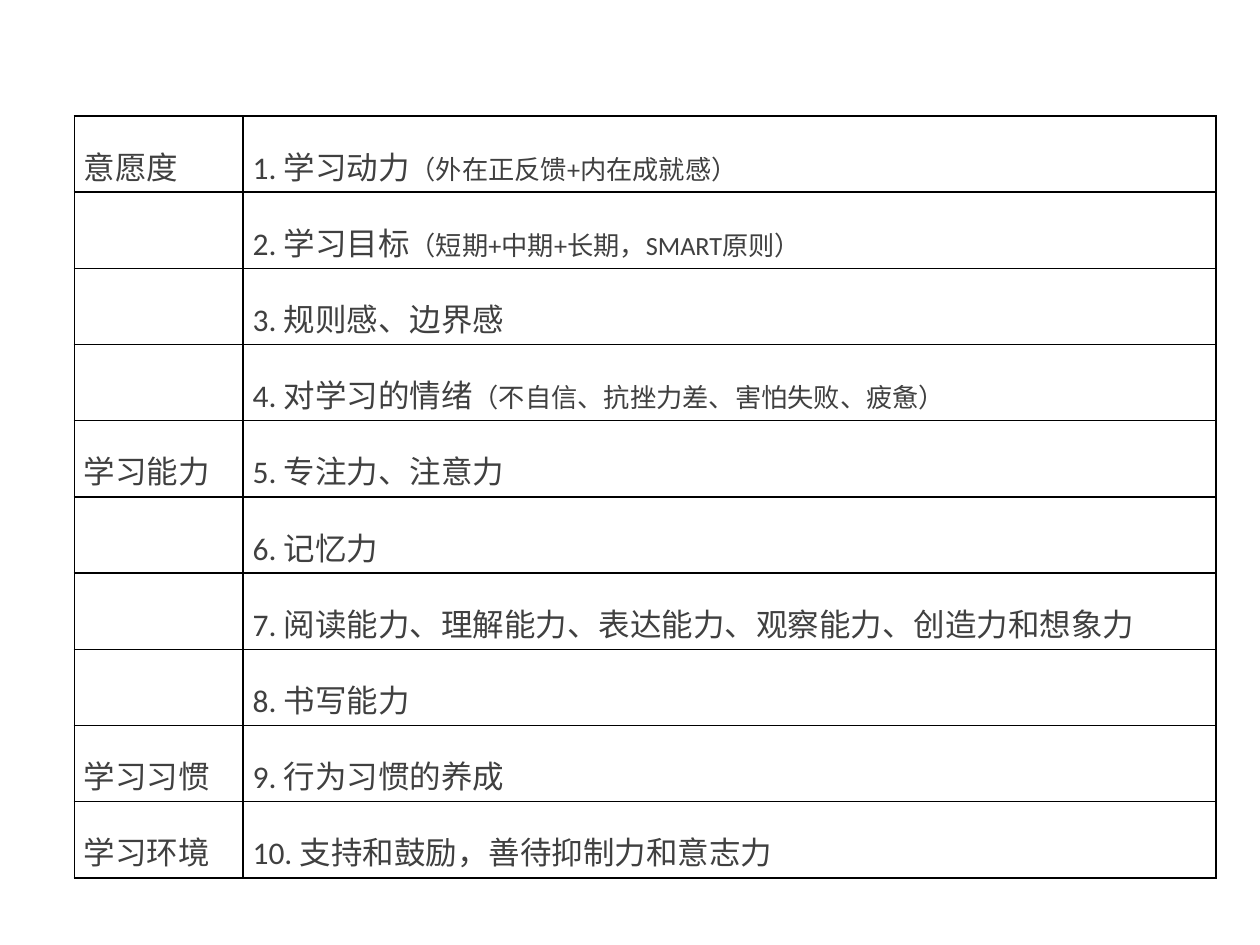
from lxml import etree
from pptx import Presentation
from pptx.dml.color import RGBColor
from pptx.enum.text import MSO_ANCHOR
from pptx.oxml.ns import qn
from pptx.util import Inches, Pt

MIDDLE = MSO_ANCHOR.MIDDLE
BLANK_LAYOUT = 6
FONT = "Calibri"
COLORS = {"text": "404040", "border": "000000"}
TOPIC_SIZE, DETAIL_SIZE = 18, 15
LEFT, TOP, HEIGHT = 0.59, 0.92, 6.05
COLUMN_WIDTHS = (1.34, 7.72)

# Each area lists its topics as (topic, detail in brackets).
AREAS = {
    "意愿度": [
        ("学习动力", "（外在正反馈+内在成就感）"),
        ("学习目标", "（短期+中期+长期，SMART原则）"),
        ("规则感、边界感", ""),
        ("对学习的情绪", "（不自信、抗挫力差、害怕失败、疲惫）"),
    ],
    "学习能力": [
        ("专注力、注意力", ""),
        ("记忆力", ""),
        ("阅读能力、理解能力、表达能力、观察能力、创造力和想象力", ""),
        ("书写能力", ""),
    ],
    "学习习惯": [("行为习惯的养成", "")],
    "学习环境": [("支持和鼓励，善待抑制力和意志力", "")],
}


def table_rows():
    """Number the topics throughout and name each area on its first row only."""
    rows = []
    for area, topics in AREAS.items():
        for index, (topic, detail) in enumerate(topics):
            label = area if index == 0 else ""
            rows.append((label, f"{len(rows) + 1}. {topic}", detail))
    return rows


def add_borders(cell):
    properties = cell._tc.get_or_add_tcPr()
    for position, side in enumerate(("a:lnL", "a:lnR", "a:lnT", "a:lnB")):
        line = etree.Element(qn(side), w=str(Pt(1)))
        fill = etree.SubElement(line, qn("a:solidFill"))
        etree.SubElement(fill, qn("a:srgbClr"), val=COLORS["border"])
        properties.insert(position, line)


def format_cell(cell):
    cell.fill.background()
    cell.vertical_anchor = MIDDLE
    cell.margin_left = cell.margin_right = Pt(5.4)
    cell.margin_top = cell.margin_bottom = Inches(0.03)
    add_borders(cell)


def write_cell(cell, topic, detail=""):
    paragraph = cell.text_frame.paragraphs[0]
    paragraph.line_spacing = 1.5
    paragraph.font.name = FONT
    paragraph.font.color.rgb = RGBColor.from_string(COLORS["text"])
    for text, size in ((topic, TOPIC_SIZE), (detail, DETAIL_SIZE)):
        if text:
            run = paragraph.add_run()
            run.text = text
            run.font.size = Pt(size)


def add_topic_table(slide):
    rows = table_rows()
    table = slide.shapes.add_table(
        len(rows), len(COLUMN_WIDTHS), Inches(LEFT), Inches(TOP),
        Inches(sum(COLUMN_WIDTHS)), Inches(HEIGHT),
    ).table
    table.first_row = table.horz_banding = False
    for column, width in zip(table.columns, COLUMN_WIDTHS):
        column.width = Inches(width)
    for row, (area, topic, detail) in zip(table.rows, rows):
        area_cell, topic_cell = row.cells
        format_cell(area_cell)
        format_cell(topic_cell)
        if area:
            write_cell(area_cell, area)
        write_cell(topic_cell, topic, detail)


def main():
    presentation = Presentation()
    presentation.slide_width = Inches(10)
    presentation.slide_height = Inches(7.5)
    slide = presentation.slides.add_slide(presentation.slide_layouts[BLANK_LAYOUT])
    add_topic_table(slide)
    presentation.save("out.pptx")


if __name__ == "__main__":
    main()
